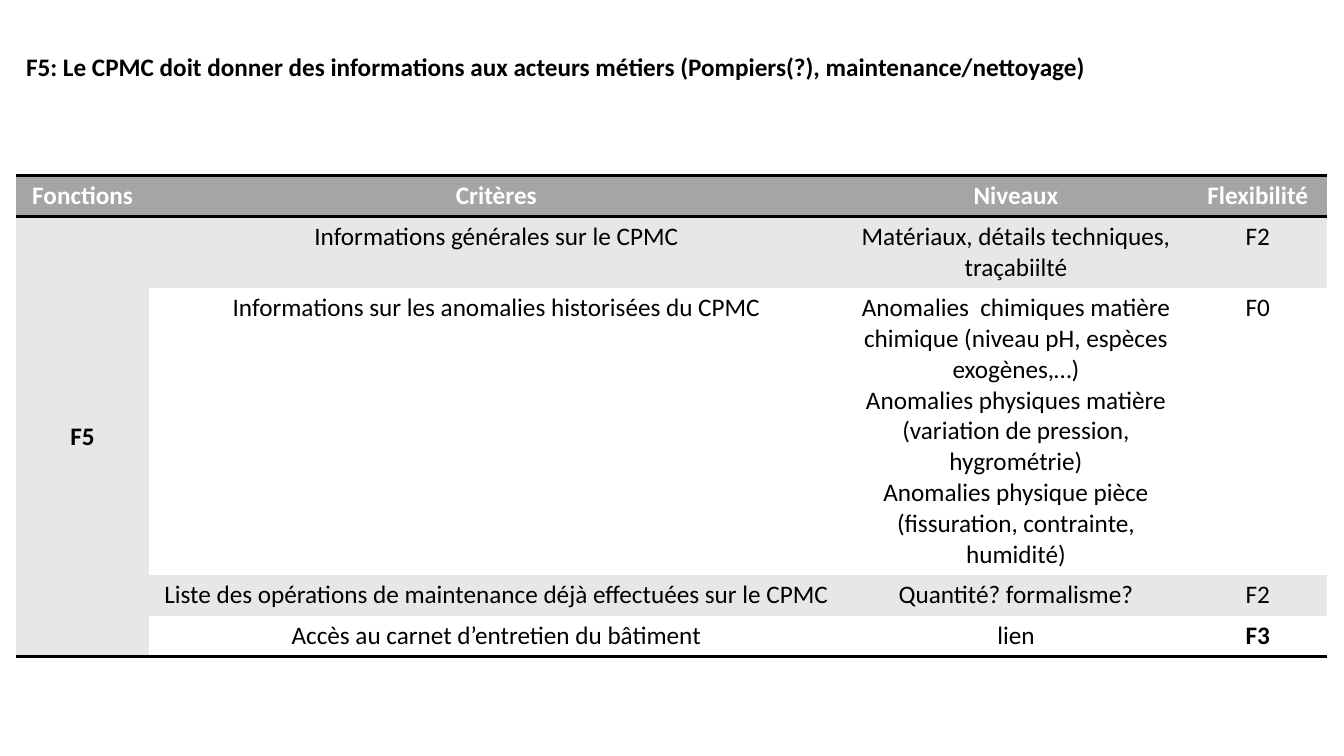
from dataclasses import dataclass

from lxml import etree
from pptx import Presentation
from pptx import util as u
from pptx.dml.color import RGBColor
from pptx.enum import text as t
from pptx.oxml import ns

Pt = u.Pt


@dataclass(frozen=True)
class Theme:
    font: str = "Calibri"
    size: float = 18
    ink: str = "000000"
    white: str = "FFFFFF"
    head: str = "A5A5A5"
    band: str = "E7E7E7"
    rule: float = 2


THEME = Theme()
NO_GRID = "{2D5ABB26-0587-4C30-8999-92F81FD0307C}"

TITLE = ("F5: Le CPMC doit donner des informations aux acteurs métiers "
         "(Pompiers(?), maintenance/nettoyage)")
HEADS = ["Fonctions", "Critères", "Niveaux", "Flexibilité"]
LEVELS = """Anomalies  chimiques matière chimique (niveau pH, espèces exogènes,…)
Anomalies physiques matière
(variation de pression, hygrométrie)
Anomalies physique pièce
(fissuration, contrainte, humidité)"""
ROWS = [
    ["F5", "Informations générales sur le CPMC",
     "Matériaux, détails techniques, traçabiilté", "F2"],
    ["", "Informations sur les anomalies historisées du CPMC", LEVELS, "F0"],
    ["", "Liste des opérations de maintenance déjà effectuées sur le CPMC",
     "Quantité? formalisme?", "F2"],
    ["", "Accès au carnet d’entretien du bâtiment", "lien", "F3"],
]
BOLD = {"F5", "F3", *HEADS}

# Lengths in points
LEFT, WIDTH = 11.5, 936.7
COLS = [95, 496.1, 246.2, 99.4]
LINE, PAD = 21.97, 7.2
LINES = [1, 2, 9, 1, 1]  # text lines in each table row


def write(frame, words, color=THEME.ink, bold=False, align=t.PP_ALIGN.LEFT):
    """Fill a text frame, one paragraph for each line of words."""
    for i, line in enumerate(words.split("\n")):
        para = frame.add_paragraph() if i else frame.paragraphs[0]
        para.alignment = align
        run = para.add_run()
        run.text = line
        run.font.name = THEME.font
        run.font.size = Pt(THEME.size)
        run.font.bold = bold
        run.font.color.rgb = RGBColor.from_string(color)


def paint(cell, color):
    cell.fill.solid()
    cell.fill.fore_color.rgb = RGBColor.from_string(color)


def border(cell, *sides):
    """Draw rules on the given sides, listed in schema order (T, B)."""
    props = cell._tc.get_or_add_tcPr()
    for i, side in enumerate(sides):
        line = etree.Element(ns.qn(f"a:ln{side}"), w=str(Pt(THEME.rule)))
        fill = etree.SubElement(line, ns.qn("a:solidFill"))
        etree.SubElement(fill, ns.qn("a:srgbClr"), val=THEME.ink)
        props.insert(i, line)


def add_title(slide):
    box = slide.shapes.add_textbox(Pt(LEFT), Pt(33.1), Pt(WIDTH), Pt(29))
    frame = box.text_frame
    frame.word_wrap = True
    frame.auto_size = t.MSO_AUTO_SIZE.SHAPE_TO_FIT_TEXT
    write(frame, TITLE, bold=True)


def add_grid(slide):
    highs = [n * LINE + PAD for n in LINES]
    shape = slide.shapes.add_table(len(highs), len(COLS), Pt(LEFT), Pt(125.3),
                                   Pt(WIDTH), Pt(sum(highs)))
    grid = shape.table
    grid._tbl.tblPr.find(ns.qn("a:tableStyleId")).text = NO_GRID
    grid.horz_banding = False
    for col, width in zip(grid.columns, COLS):
        col.width = Pt(width)
    for row, high in zip(grid.rows, highs):
        row.height = Pt(high)

    # Cells: grey header, then alternating bands beside the function column
    last = len(ROWS)
    for r, row in enumerate([HEADS] + ROWS):
        for c, words in enumerate(row):
            cell = grid.cell(r, c)
            banded = c == 0 or r % 2
            paint(cell, THEME.head if r == 0 else
                  THEME.band if banded else THEME.white)
            if words:
                write(cell.text_frame, words, bold=words in BOLD,
                      color=THEME.ink if r else THEME.white,
                      align=t.PP_ALIGN.CENTER)
            if r == 0:
                border(cell, "T", "B")
            elif r == last or words == "F5":
                border(cell, "B")

    # Function label spans all criteria
    label = grid.cell(1, 0)
    label.merge(grid.cell(last, 0))
    label.vertical_anchor = t.MSO_ANCHOR.MIDDLE


def main():
    deck = Presentation()
    deck.slide_width, deck.slide_height = Pt(960), Pt(540)
    slide = deck.slides.add_slide(deck.slide_layouts[6])
    add_grid(slide)
    add_title(slide)
    deck.save("out.pptx")


if __name__ == "__main__":
    main()
